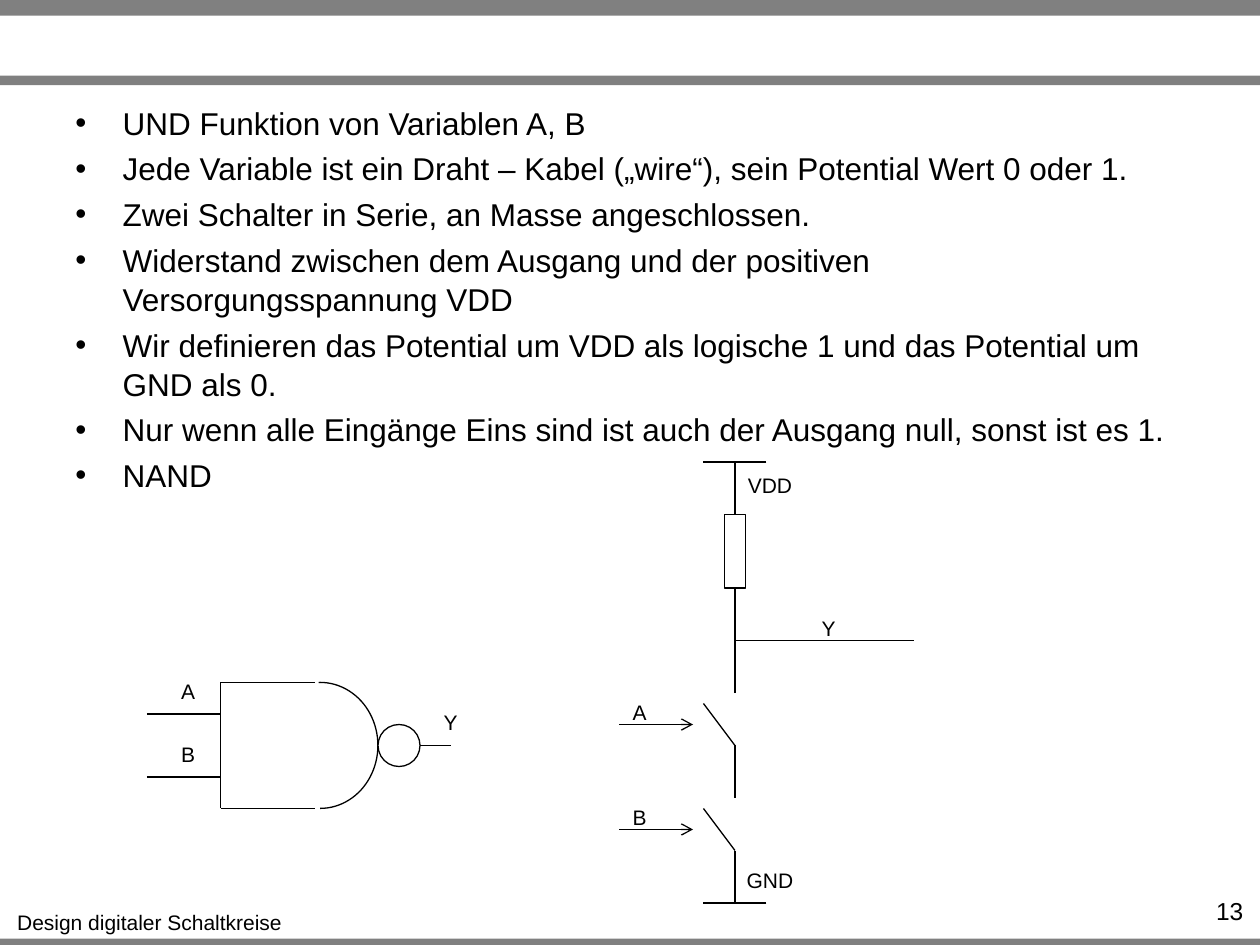
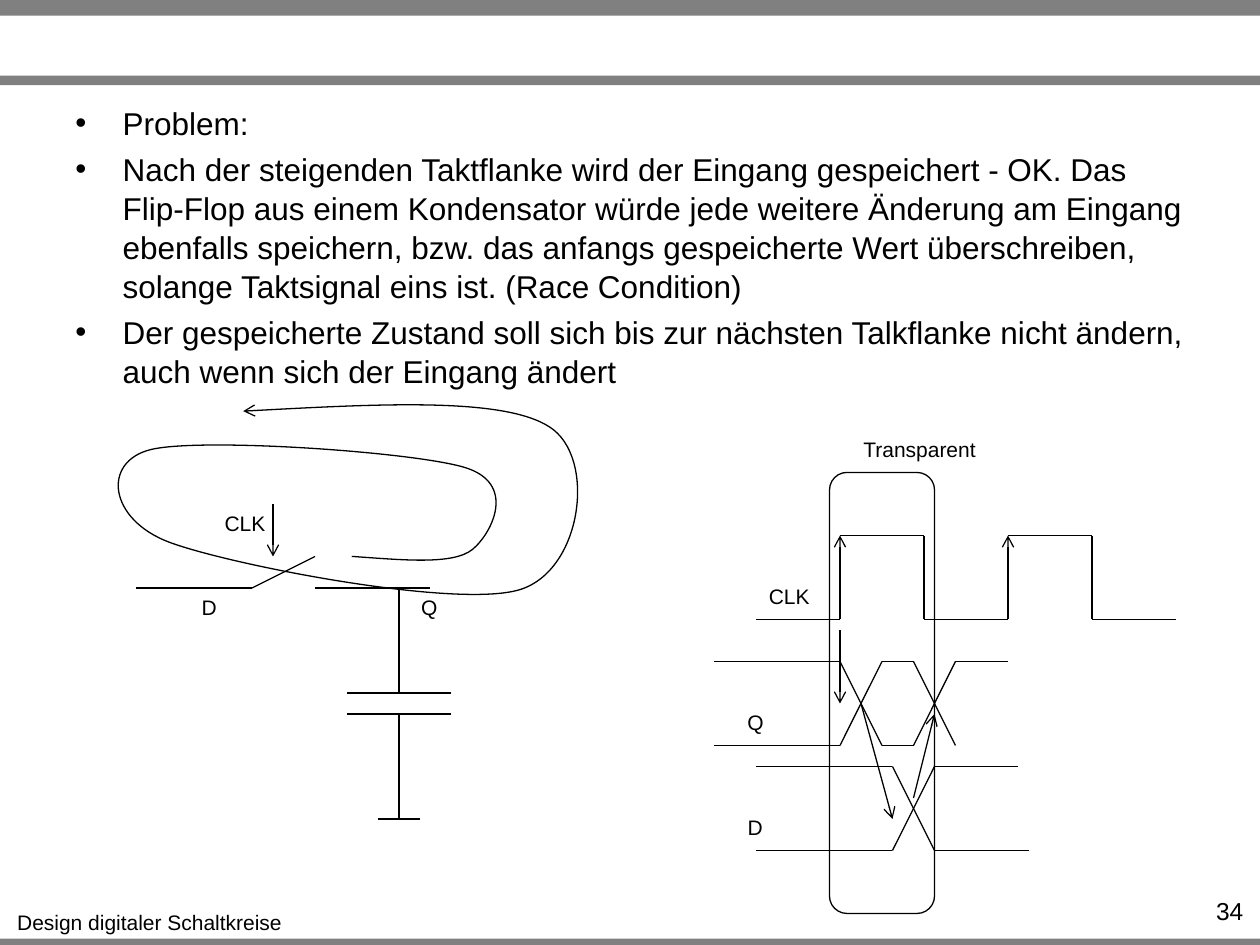
from itertools import pairwise, product

from lxml import etree
from pptx import Presentation
from pptx.dml.color import RGBColor
from pptx.enum.shapes import MSO_CONNECTOR, MSO_SHAPE
from pptx.enum.text import MSO_ANCHOR, PP_ALIGN
from pptx.oxml.ns import qn
from pptx.util import Pt

BLACK = RGBColor(0x00, 0x00, 0x00)
WHITE = RGBColor(0xFF, 0xFF, 0xFF)
GREY = RGBColor(0x80, 0x80, 0x80)

STRAIGHT = MSO_CONNECTOR.STRAIGHT
RECT, ROUND_RECT = MSO_SHAPE.RECTANGLE, MSO_SHAPE.ROUNDED_RECTANGLE
OVAL, ARC = MSO_SHAPE.OVAL, MSO_SHAPE.ARC
LEFT, CENTER, RIGHT = PP_ALIGN.LEFT, PP_ALIGN.CENTER, PP_ALIGN.RIGHT
TOP_SIDE, BOTTOM_SIDE = 0, 2

FONT = "Arial"
SLIDE_W, SLIDE_H = 720, 540
BANDS = [(536.4, 3.6), (0, 9), (43.2, 5.4)]  # top, height
FOOTER = "Design digitaler Schaltkreise"
LABEL_WIDTHS = {"CLK": 38, "VDD": 40, "GND": 42, "Transparent": 79}
LETTER_WIDTH = 23

NAND_BULLETS = [
    "UND Funktion von Variablen A, B",
    "Jede Variable ist ein Draht – Kabel („wire“), sein Potential Wert 0 oder 1.",
    "Zwei Schalter in Serie, an Masse angeschlossen.",
    "Widerstand zwischen dem Ausgang und der positiven Versorgungsspannung VDD",
    "Wir definieren das Potential um VDD als logische 1 und das Potential um "
    "GND als 0.",
    "Nur wenn alle Eingänge Eins sind ist auch der Ausgang null, sonst ist es 1.",
    "NAND",
]
RACE_BULLETS = [
    "Problem:",
    "Nach der steigenden Taktflanke wird der Eingang gespeichert - OK. Das "
    "Flip-Flop aus einem Kondensator würde jede weitere Änderung am Eingang "
    "ebenfalls speichern, bzw. das anfangs gespeicherte Wert überschreiben, "
    "solange Taktsignal eins ist. (Race Condition)",
    "Der gespeicherte Zustand soll sich bis zur nächsten Talkflanke nicht "
    "ändern, auch wenn sich der Eingang ändert",
]

RACE_LOOP_BOX = (68, 232, 330, 340)  # left, top, right, bottom
RACE_LOOP_START = (201, 318)
RACE_LOOP_CURVES = [
    [(230, 320), (259, 323), (270, 314)],
    [(281, 305), (296, 276), (265, 267)],
    [(234, 258), (114, 250), (86, 257)],
    [(58, 264), (62, 297), (97, 310)],
    [(132, 323), (261, 348), (297, 337)],
    [(333, 326), (341, 261), (314, 244)],
    [(288, 227), (213, 231), (139, 235)],
]


def style_line(obj, arrow=False):
    obj.line.color.rgb = BLACK
    obj.line.width = Pt(0.75)
    if arrow:
        ln = obj.line._get_or_add_ln()
        etree.SubElement(ln, qn("a:tailEnd"), type="arrow")


def add_shape(slide, kind, left, top, width, height, fill=None, outline=True):
    sp = slide.shapes.add_shape(kind, Pt(left), Pt(top), Pt(width), Pt(height))
    sp.shadow.inherit = False
    if fill is None:
        sp.fill.background()
    else:
        sp.fill.solid()
        sp.fill.fore_color.rgb = fill
    if outline:
        style_line(sp)
    else:
        sp.line.fill.background()
    return sp


def add_wire(slide, start, end, arrow=False):
    ends = [Pt(v) for v in (*start, *end)]
    wire = slide.shapes.add_connector(STRAIGHT, *ends)
    style_line(wire, arrow)
    etree.SubElement(wire._element.spPr, qn("a:effectLst"))
    return wire


def add_wires(slide, *wires):
    for start, end in wires:
        add_wire(slide, start, end)


def add_text(slide, lines, box, size, align, wrap=True):
    """Add a text box with one paragraph per line and return its text frame."""
    tf = slide.shapes.add_textbox(*(Pt(v) for v in box)).text_frame
    tf.word_wrap = wrap
    tf.vertical_anchor = MSO_ANCHOR.TOP
    font = {"name": FONT, "size": Pt(size)}
    for i, line in enumerate(lines):
        p = tf.paragraphs[0] if i == 0 else tf.add_paragraph()
        p.alignment = align
        r = p.add_run()
        r.text = line
        for name, value in font.items():
            setattr(r.font, name, value)
        r.font.color.rgb = BLACK
    return tf


def add_label(slide, text, left, top):
    width = LABEL_WIDTHS.get(text, LETTER_WIDTH)
    add_text(slide, [text], (left, top, width, 21.6), 12, CENTER, wrap=False)


def add_bullets(slide, lines, height):
    tf = add_text(slide, lines, (36, 55, 648, height), 18, LEFT)
    for i, p in enumerate(tf.paragraphs):
        pPr = p._p.get_or_add_pPr()
        pPr.set("marL", str(Pt(27)))
        pPr.set("indent", str(-Pt(27)))
        etree.SubElement(pPr, qn("a:buFont"), typeface=FONT)
        etree.SubElement(pPr, qn("a:buChar"), char="•")
        p.line_spacing = 1.04
        p.space_before = Pt(3.6 if i else 0)


def add_race_loop(slide):
    """Draw the curved arrow from the output back past the input."""
    left, top, right, bottom = (Pt(v) for v in RACE_LOOP_BOX)
    builder = slide.shapes.build_freeform(left, top)
    builder.add_line_segments([(right, bottom)], close=False)
    sp = builder.convert_to_shape()
    sp.shadow.inherit = False
    sp.fill.background()
    style_line(sp, arrow=True)

    outline = sp._element.find(".//" + qn("a:path"))
    for child in list(outline):
        outline.remove(child)
    steps = [("a:moveTo", [RACE_LOOP_START])]
    steps += [("a:cubicBezTo", points) for points in RACE_LOOP_CURVES]
    for tag, points in steps:
        step = etree.SubElement(outline, qn(tag))
        for x, y in points:
            etree.SubElement(step, qn("a:pt"),
                             x=str(Pt(x) - left), y=str(Pt(y) - top))


def add_slide(prs, number, bullets, body_height):
    slide = prs.slides.add_slide(prs.slide_layouts[6])
    for top, height in BANDS:
        add_shape(slide, RECT, 0, top, SLIDE_W, height, GREY, outline=False)
    add_text(slide, [FOOTER], (2, 516, 167, 21.6), 12, CENTER, wrap=False)
    add_bullets(slide, bullets, body_height)
    add_text(slide, [str(number)], (655, 508.3, 62.6, 17.3), 14, RIGHT)
    return slide


def add_nand_symbol(slide):
    left, top, bottom = 126, 390, 462
    add_wires(slide, ((left, top), (left, bottom)))
    for y in (top, bottom):
        add_wire(slide, (left, y), (180, y))
    for name, y in (("A", 408), ("B", 444)):
        add_wire(slide, (84, y), (left, y))
        add_label(slide, name, 96, y - 24)
    arc = add_shape(slide, ARC, 150, top, 66, bottom - top)
    arc.adjustments[0], arc.adjustments[1] = 161.1, 54
    add_wire(slide, (216, 426), (258, 426))
    add_shape(slide, OVAL, 216, 414, 24, 24, WHITE)
    add_label(slide, "Y", 246, 402)


def add_nand_circuit(slide):
    x = 420
    for rail_y in (264, 516):
        add_wire(slide, (x + 18, rail_y), (x - 18, rail_y))
    resistor = add_shape(slide, RECT, x - 6, 294, 12, 42)
    supply = add_wire(slide, (x, 294), (x, 264))
    supply.begin_connect(resistor, TOP_SIDE)
    pull_up = add_wire(slide, (x, 366), (x, 336))
    pull_up.end_connect(resistor, BOTTOM_SIDE)
    add_wires(slide, ((x, 396), (x, 366)), ((x, 366), (522, 366)))
    for name, y in (("A", 426), ("B", 486)):
        add_wires(slide, ((x, y + 30), (x, y)), ((x, y), (x - 18, y - 24)))
        add_wire(slide, (354, y - 12), (396, y - 12), arrow=True)
        add_label(slide, name, 354, y - 30)
    add_label(slide, "Y", 462, 348)
    add_label(slide, "VDD", 420, 266.5)
    add_label(slide, "GND", 419, 492)


def add_capacitor_latch(slide):
    x = 228
    add_wires(
        slide,
        ((78, 336), (144, 336)),
        ((144, 336), (180, 318)),
        ((180, 336), (246, 336)),
        ((x, 336), (x, 396)),
        ((x, 408), (x, 468)),
    )
    for y, half in ((396, 30), (408, 30), (468, 12)):
        add_wire(slide, (x + half, y), (x - half, y))
    add_wire(slide, (156, 288), (156, 318), arrow=True)
    add_label(slide, "CLK", 121, 288)
    add_label(slide, "D", 108, 336)
    add_label(slide, "Q", 233.5, 336)
    add_race_loop(slide)


def add_clock(slide):
    """Draw two clock pulses whose rising edges carry an arrow."""
    low, high, half_period = 354, 306, 48
    points = [(432, low)]
    for rise in (480, 576):
        fall = rise + half_period
        points += [(rise, low), (rise, high), (fall, high), (fall, low)]
    points.append((672, low))
    for start, end in pairwise(points):
        add_wire(slide, start, end, arrow=end[1] < start[1])


def add_crossing(slide, x, y):
    for dx, dy in product((12, -12), (-24, 24)):
        add_wire(slide, (x, y), (x + dx, y + dy))


def add_timing_diagram(slide):
    add_clock(slide)
    for x, y in ((492, 402), (534, 402), (522, 462)):
        add_crossing(slide, x, y)
    levels = [
        (378, (408, 480), (504, 522), (546, 576)),
        (426, (408, 480), (504, 522)),
        (438, (432, 510), (534, 582)),
        (486, (432, 510), (534, 588)),
    ]
    for y, *spans in levels:
        for start, end in spans:
            add_wire(slide, (start, y), (end, y))
    causes = [
        ((480, 360), (480, 402)),
        ((492, 402), (510, 468)),
        ((522, 456), (534, 408)),
    ]
    for start, end in causes:
        add_wire(slide, start, end, arrow=True)
    add_shape(slide, ROUND_RECT, 474, 270, 60, 252)
    add_label(slide, "Transparent", 486, 246)
    add_label(slide, "CLK", 432, 330)
    add_label(slide, "Q", 420, 402)
    add_label(slide, "D", 420, 462)


def main():
    prs = Presentation()
    prs.slide_width, prs.slide_height = Pt(SLIDE_W), Pt(SLIDE_H)

    nand = add_slide(prs, 13, NAND_BULLETS, 155.5)
    add_nand_symbol(nand)
    add_nand_circuit(nand)

    race = add_slide(prs, 34, RACE_BULLETS, 65.5)
    add_capacitor_latch(race)
    add_timing_diagram(race)

    prs.save("out.pptx")


if __name__ == "__main__":
    main()
